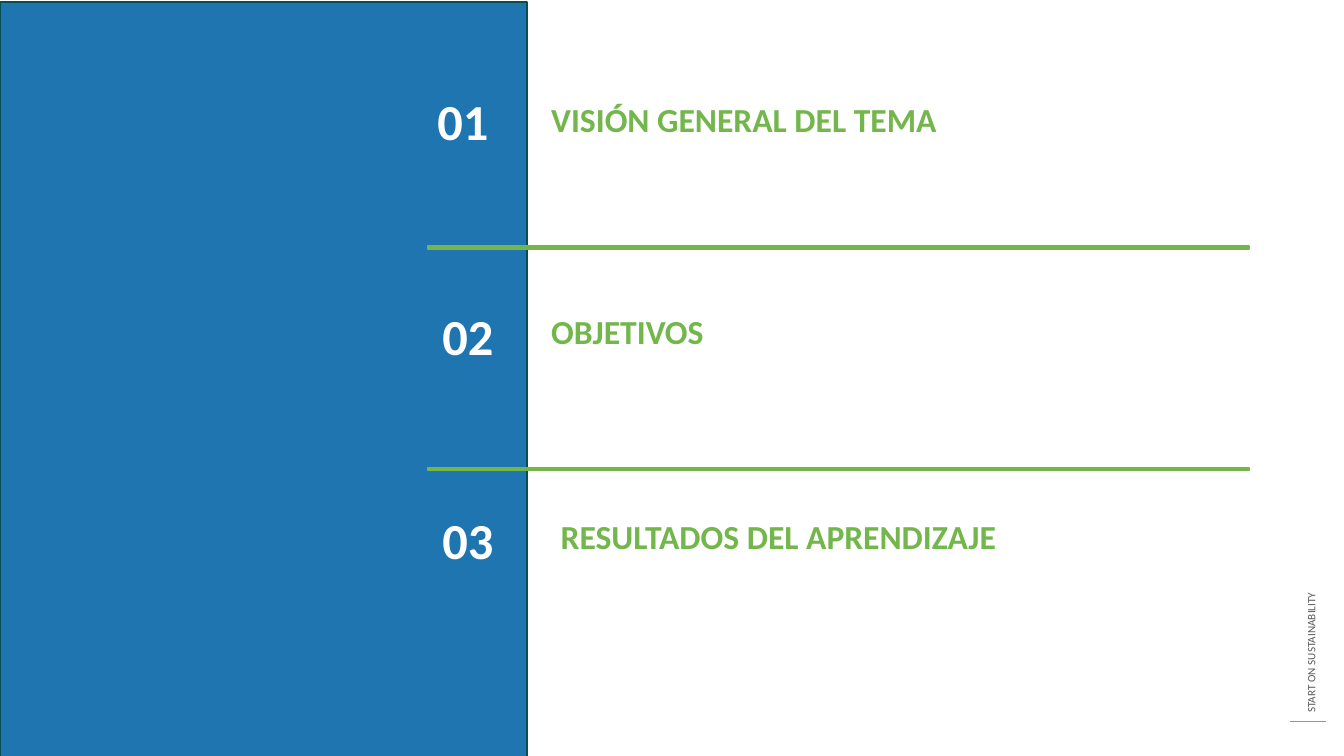
from pptx import Presentation
from pptx.dml.color import RGBColor
from pptx.enum.shapes import MSO_CONNECTOR, MSO_SHAPE
from pptx.enum.text import MSO_ANCHOR, PP_ALIGN
from pptx.oxml.ns import qn
from pptx.util import Pt
from lxml.etree import SubElement

FONT = "Calibri"
GREEN, BLUE, TEAL = "73B64B", "1E75B0", "054F50"
WHITE, GRAY = "FFFFFF", "595959"

TOPICS = [
    ("01", 305.3, 48.2, "VISIÓN GENERAL DEL TEMA", 386.6, 67),
    ("02", 308.9, 201.6, "OBJETIVOS", 386.6, 218.2),
    ("03", 308.9, 347, "RESULTADOS DEL APRENDIZAJE", 393.4, 365),
]


def color(code):
    return RGBColor.from_string(code)


def add_rect(slide, left, top, width, height, fill, edge):
    rect = slide.shapes.add_shape(
        MSO_SHAPE.RECTANGLE, Pt(left), Pt(top), Pt(width), Pt(height))
    rect.shadow.inherit = False
    rect.fill.solid()
    rect.fill.fore_color.rgb = color(fill)
    rect.line.color.rgb = color(edge)
    rect.line.width = Pt(1)


def add_text(slide, text, left, top, width, height, size, tint,
             bold=False, space=1.0):
    box = slide.shapes.add_textbox(Pt(left), Pt(top), Pt(width), Pt(height))
    frame = box.text_frame
    frame.word_wrap = True
    frame.vertical_anchor = MSO_ANCHOR.TOP
    frame.text = text
    para = frame.paragraphs[0]
    para.alignment = PP_ALIGN.LEFT
    para.line_spacing = space
    font = para.runs[0].font
    font.name = FONT
    font.size = Pt(size)
    font.bold = bold
    font.color.rgb = color(tint)
    return box


def add_line(slide, left, right, top):
    line = slide.shapes.add_connector(
        MSO_CONNECTOR.STRAIGHT, Pt(left), Pt(top), Pt(right), Pt(top))
    line.line.color.rgb = color(GREEN)
    line.line.width = Pt(1)
    SubElement(line._element.spPr, qn("a:effectLst"))


def add_topic(slide, number, num_left, num_top, title, left, top):
    add_text(slide, title, left, top, 517, 26.6, 24, GREEN, True)
    add_text(slide, number, num_left, num_top, 97.2, 75.6, 36, WHITE,
             True, 1.3)


def main():
    deck = Presentation()
    deck.slide_width, deck.slide_height = Pt(960), Pt(540)
    slide = deck.slides.add_slide(deck.slide_layouts[6])

    motto = add_text(slide, "START ON SUSTAINABILITY",
                     776.2, 347, 321.1, 17.3, 8, GRAY)
    motto.rotation = 270
    add_line(slide, 921.6, 946.8, 515.5)
    add_rect(slide, 0, 1.4, 376.6, 540, BLUE, TEAL)

    for topic in TOPICS:
        add_topic(slide, *topic)
    for top in (175.7, 334.1):
        add_rect(slide, 305.3, top, 586.8, 2.2, GREEN, GREEN)

    deck.save("out.pptx")


if __name__ == "__main__":
    main()
